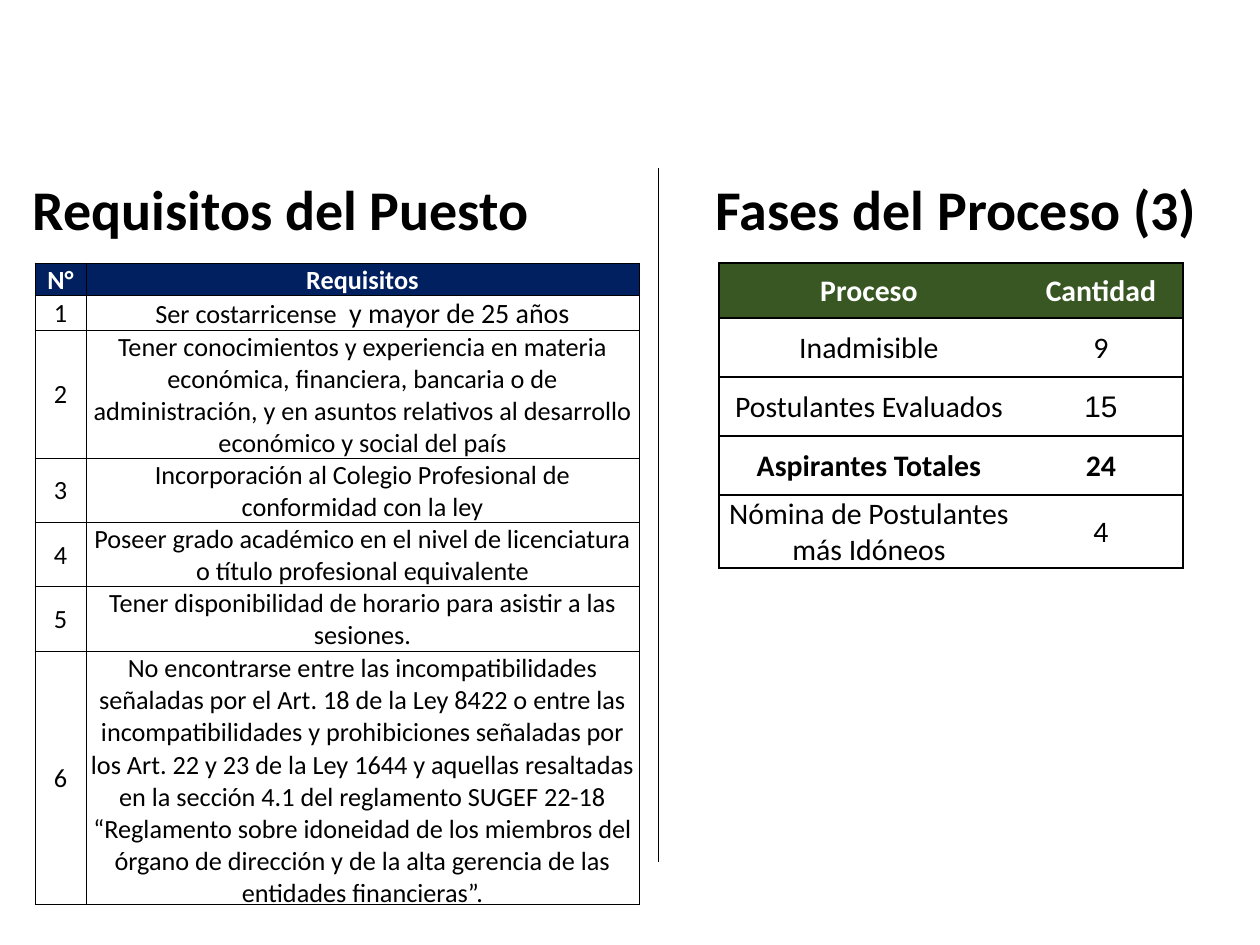
from lxml import etree
from pptx import Presentation
from pptx.dml.color import RGBColor
from pptx.enum.shapes import MSO_CONNECTOR
from pptx.enum.text import MSO_ANCHOR, PP_ALIGN
from pptx.oxml.ns import qn
from pptx.util import Emu, Pt

STRAIGHT = MSO_CONNECTOR.STRAIGHT
MIDDLE = MSO_ANCHOR.MIDDLE
CENTER = PP_ALIGN.CENTER
BLACK = RGBColor(0, 0, 0)
WHITE = RGBColor(255, 255, 255)
NAVY = RGBColor(0x00, 0x20, 0x60)
GREEN = RGBColor(0x38, 0x57, 0x23)

REQUIREMENTS = [
    ("N°", "Requisitos"),
    ("1", [("Ser costarricense ", 15), (" y mayor de 25 años", 16)]),
    ("2", "Tener conocimientos y experiencia en materia económica, financiera, "
          "bancaria o de administración, y en asuntos relativos al desarrollo "
          "económico y social del país"),
    ("3", "Incorporación al Colegio Profesional de conformidad con la ley"),
    ("4", "Poseer grado académico en el nivel de licenciatura o título "
          "profesional equivalente"),
    ("5", "Tener disponibilidad de horario para asistir a las sesiones."),
    ("6", "No encontrarse entre las incompatibilidades señaladas por el Art. 18 "
          "de la Ley 8422 o entre las incompatibilidades y prohibiciones "
          "señaladas por los Art. 22 y 23 de la Ley 1644 y aquellas resaltadas "
          "en la sección 4.1 del reglamento SUGEF 22-18 “Reglamento sobre "
          "idoneidad de los miembros del órgano de dirección y de la alta "
          "gerencia de las entidades financieras”."),
]
PHASES = [
    ("Proceso", "Cantidad"),
    ("Inadmisible", "9"),
    ("Postulantes Evaluados", "15"),
    ("Aspirantes Totales", "24"),
    ("Nómina de Postulantes más Idóneos", "4"),
]


def px(length):
    return Emu(round(length * 914400 / 126))


class SlideBuilder:
    """Hold the style and the current slide, and add elements to it."""

    font_name = "Calibri"

    def __init__(self, page):
        self.page = page

    def style(self, font, size, color=BLACK, bold=False):
        font.name = self.font_name
        font.size = Pt(size)
        font.bold = bold
        font.color.rgb = color

    def heading(self, text, left, top, width, height):
        box = self.page.shapes.add_textbox(*map(px, (left, top, width, height)))
        box.text_frame.word_wrap = True
        para = box.text_frame.paragraphs[0]
        para.text = text
        self.style(para.font, 32, bold=True)

    def divider(self, x, top, bottom):
        line = self.page.shapes.add_connector(STRAIGHT, px(x), px(top), px(x), px(bottom))
        line.line.color.rgb = BLACK
        line.line.width = Pt(0.5)
        etree.SubElement(line._element.spPr, qn("a:effectLst"))

    def border(self, cell, sides, width):
        properties = cell._tc.get_or_add_tcPr()
        for position, side in enumerate("LRTB"):
            edge = etree.Element(qn(f"a:ln{side}"), w=str(Pt(width)))
            if side in sides:
                fill = etree.SubElement(edge, qn("a:solidFill"))
                etree.SubElement(fill, qn("a:srgbClr"), val=str(BLACK))
            else:
                etree.SubElement(edge, qn("a:noFill"))
            properties.insert(position, edge)

    def cell(self, cell, content, size, fill, color, bold):
        cell.margin_left = cell.margin_right = cell.margin_top = px(1)
        cell.margin_bottom = 0
        cell.vertical_anchor = MIDDLE
        cell.fill.solid()
        cell.fill.fore_color.rgb = fill
        para = cell.text_frame.paragraphs[0]
        para.alignment = CENTER
        if isinstance(content, str):
            para.text = content
            self.style(para.font, size, color, bold)
            return
        for text, span_size in content:
            span = para.add_run()
            span.text = text
            self.style(span.font, span_size, color, bold)

    def table(self, rows, left, top, widths, heights, size, header_fill,
              column_sides, border_width, bold_rows=(0,)):
        frame = self.page.shapes.add_table(
            len(rows), len(widths), px(left), px(top), px(sum(widths)), px(sum(heights)))
        table = frame.table
        table.horz_banding = False
        for column, width in zip(table.columns, widths):
            column.width = px(width)
        for index, (row, height) in enumerate(zip(rows, heights)):
            table.rows[index].height = px(height)
            fill, color = (WHITE, BLACK) if index else (header_fill, WHITE)
            for number, content in enumerate(row):
                cell = table.cell(index, number)
                self.cell(cell, content, size, fill, color, index in bold_rows)
                self.border(cell, column_sides[number], border_width)
        return table


def main():
    deck = Presentation()
    deck.slide_width, deck.slide_height = px(1260), px(945)
    builder = SlideBuilder(deck.slides.add_slide(deck.slide_layouts[6]))

    builder.heading("Fases del Proceso (3)", 703, 168, 571, 81)
    phases = builder.table(PHASES, 719, 263, (300, 164), (55, 59, 59, 59, 73), 17, GREEN,
                           ("LTB", "RTB"), 1, bold_rows=(0, 3))
    phases.cell(2, 1).text_frame.paragraphs[0].font.name = "Arial"

    builder.table(REQUIREMENTS, 35, 263, (51, 553), (32, 35, 128, 64, 64, 65, 253), 15,
                  NAVY, ("LRTB", "LRTB"), 0.5)
    builder.heading("Requisitos del Puesto", 20, 168, 551, 81)
    builder.divider(658, 168, 862)
    deck.save("out.pptx")


if __name__ == "__main__":
    main()
